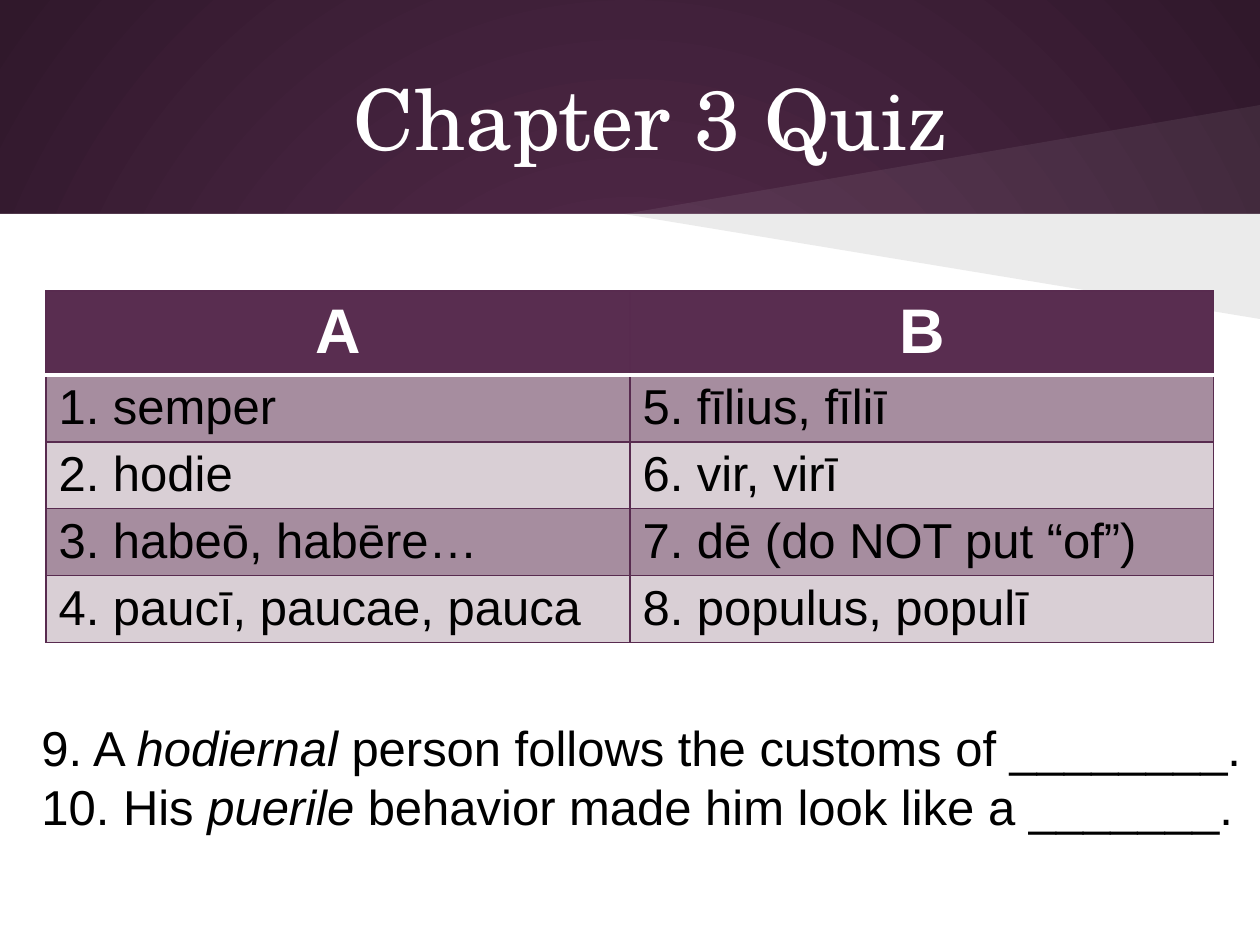
from lxml import etree
from pptx import Presentation
from pptx.dml.color import RGBColor
from pptx.enum.text import MSO_ANCHOR, PP_ALIGN
from pptx.enum.shapes import MSO_SHAPE
from pptx.oxml.ns import qn
from pptx.util import Pt

CENTER, LEFT = PP_ALIGN.CENTER, PP_ALIGN.LEFT
MIDDLE = MSO_ANCHOR.MIDDLE
RECT = MSO_SHAPE.RECTANGLE
SCALE = 914400 / 126
WIDTH, HEIGHT = 1260, 945
BAND = 214
SANS, SERIF = "Arial", "TeX Gyre Schola"
COLORS = {
    "plum": "592D50", "night": "30182B", "edge": "582B4F",
    "mauve": "A68D9F", "pale": "D9CFD5",
    "white": "FFFFFF", "black": "000000",
}
ROWS = [
    ("A", "B"),
    ("1. semper", "5. fīlius, fīliī"),
    ("2. hodie", "6. vir, virī"),
    ("3. habeō, habēre…", "7. dē (do NOT put “of”)"),
    ("4. paucī, paucae, pauca", "8. populus, populī"),
]
# Each question: text before, word in italics, text after
ASKS = [
    ("9. A ", "hodiernal", " person follows the customs of ________."),
    ("10. His ", "puerile ", "behavior made him look like a _______."),
]


def px(n):
    return round(n * SCALE)


def rgb(name):
    return RGBColor.from_string(COLORS[name])


def paint(fill, color):
    fill.solid()
    fill.fore_color.rgb = rgb(color)


def style(para, size, color, face=SANS, bold=False, align=LEFT):
    para.alignment = align
    font = para.font
    font.name, font.size, font.bold = face, Pt(size), bold
    font.color.rgb = rgb(color)


def set_back(slide):
    """Fill the background with a gradient that spreads from the centre."""
    fill = slide.background.fill
    fill.gradient()
    for stop, color in zip(fill.gradient_stops, ("plum", "night")):
        stop.color.rgb = rgb(color)
    grad = slide.element.find(".//" + qn("a:gradFill"))
    grad.remove(grad.find(qn("a:lin")))
    ring = etree.SubElement(grad, qn("a:path"), path="circle")
    sides = dict.fromkeys("ltrb", "50000")
    etree.SubElement(ring, qn("a:fillToRect"), sides)


def finish(shape, color):
    paint(shape.fill, color)
    shape.line.fill.background()
    shape.shadow.inherit = False


def add_panel(slide):
    box = slide.shapes.add_shape(RECT, 0, px(BAND), px(WIDTH), px(HEIGHT - BAND))
    finish(box, "white")


def add_wedge(slide, end, color, alpha):
    """Draw a sheer triangle from the band's edge to height end at the right."""
    path = slide.shapes.build_freeform(px(WIDTH), px(BAND))
    path.add_line_segments([(px(624), px(BAND)), (px(WIDTH), px(end))])
    wedge = path.convert_to_shape()
    finish(wedge, color)
    tone = wedge.element.spPr.find(".//" + qn("a:srgbClr"))
    etree.SubElement(tone, qn("a:alpha"), val=str(alpha * 1000))


def set_title(slide):
    title = slide.shapes.title
    slide.shapes.element.append(title.element)
    title.left, title.top = px(63), px(38)
    title.width, title.height = px(1134), px(158)
    frame = title.text_frame
    frame.text = "Chapter 3 Quiz"
    frame.vertical_anchor = MIDDLE
    para = frame.paragraphs[0]
    style(para, 48, "white", SERIF, align=CENTER)
    props = para._p.get_or_add_pPr()
    props.set("marL", "0")
    props.set("indent", str(px(42)))


def add_edge(cell, side, color, width):
    props = cell._tc.get_or_add_tcPr()
    line = etree.SubElement(props, qn("a:ln" + side), w=str(Pt(width)))
    fill = etree.SubElement(line, qn("a:solidFill"))
    etree.SubElement(fill, qn("a:srgbClr"), val=COLORS[color])


def set_cell(cell, text, row):
    head = row == 0
    cell.text = text
    cell.margin_top = cell.margin_bottom = px(5)
    para = cell.text_frame.paragraphs[0]
    if head:
        style(para, 36, "white", bold=True, align=CENTER)
    else:
        style(para, 28, "black")
    for side in "LRTB":
        rule = (row, side) in ((0, "B"), (1, "T"))
        add_edge(cell, side, *(("white", 2) if rule else ("edge", 0.75)))
    paint(cell.fill, "plum" if head else "mauve" if row % 2 else "pale")


def add_words(slide):
    high = [84] + [67] * (len(ROWS) - 1)
    table = slide.shapes.add_table(
        len(ROWS), 2, px(46), px(291), px(1168), px(sum(high))).table
    for r, words in enumerate(ROWS):
        table.rows[r].height = px(high[r])
        for c, text in enumerate(words):
            set_cell(table.cell(r, c), text, r)


def add_asks(slide):
    box = slide.shapes.add_textbox(px(29), px(711), px(1231), px(131))
    frame = box.text_frame
    frame.word_wrap = True
    for n, parts in enumerate(ASKS):
        para = frame.add_paragraph() if n else frame.paragraphs[0]
        style(para, 28, "black")
        for i, text in enumerate(parts):
            run = para.add_run()
            run.text = text
            run.font.italic = i == 1


def main():
    deck = Presentation()
    deck.slide_width, deck.slide_height = px(WIDTH), px(HEIGHT)
    slide = deck.slides.add_slide(deck.slide_layouts[5])
    set_back(slide)
    add_panel(slide)
    add_wedge(slide, 105, "white", 7)
    add_wedge(slide, 319, "black", 8)
    set_title(slide)
    add_words(slide)
    add_asks(slide)
    deck.save("out.pptx")


if __name__ == "__main__":
    main()
